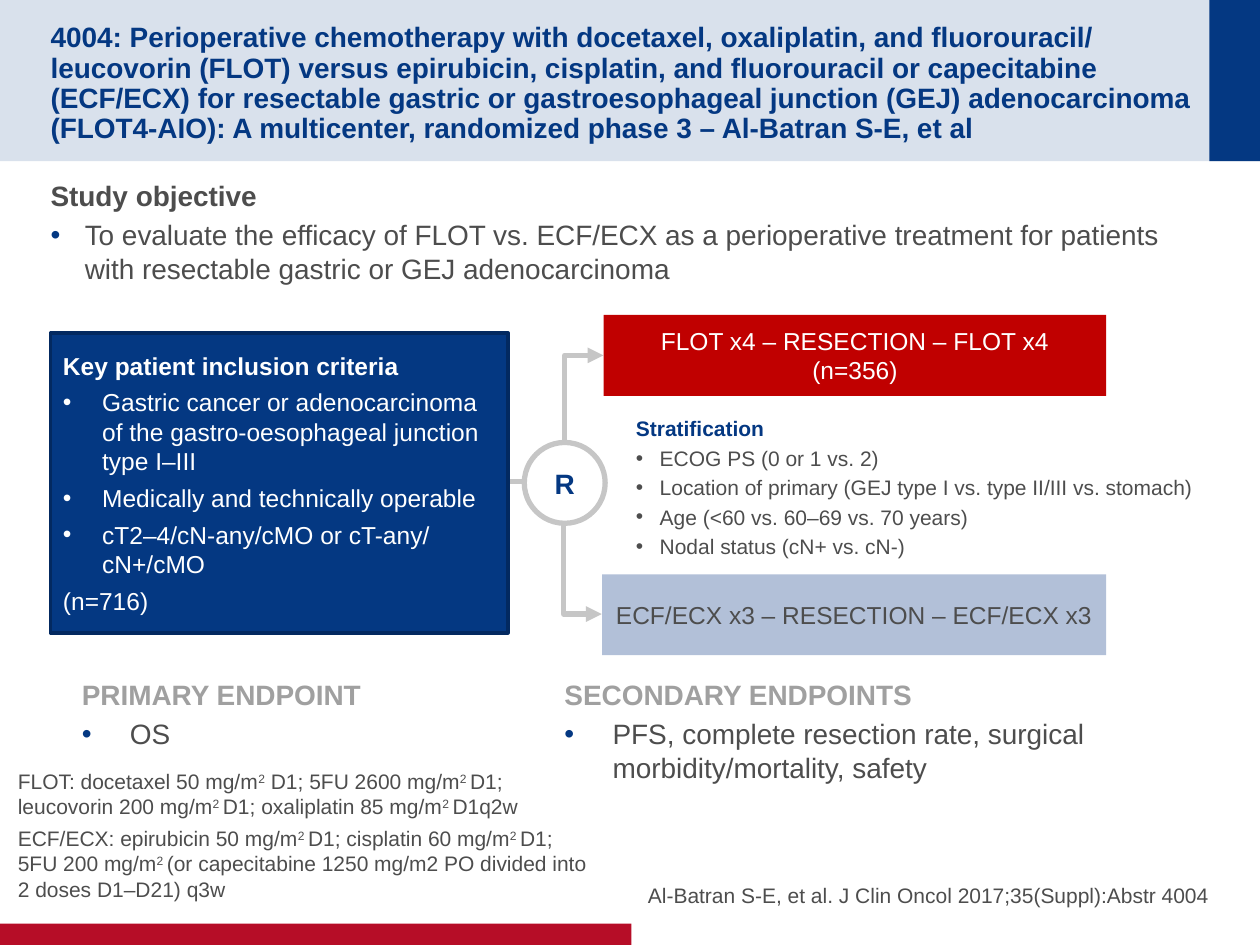
from lxml.etree import SubElement
from pptx import Presentation
from pptx.dml.color import RGBColor
from pptx.enum.shapes import MSO_CONNECTOR, MSO_SHAPE
from pptx.enum.text import MSO_ANCHOR, MSO_AUTO_SIZE, PP_ALIGN
from pptx.oxml.ns import qn
from pptx.util import Cm, Pt

NAVY = RGBColor(0x04, 0x38, 0x82)
DEEP = RGBColor(0x03, 0x29, 0x60)
CRIMSON = RGBColor(0xB6, 0x0D, 0x27)
RED = RGBColor(0xC0, 0x00, 0x00)
PALE = RGBColor(0xB2, 0xC0, 0xD8)
DARK = RGBColor(0x4D, 0x4D, 0x4D)
GREY = RGBColor(0xA0, 0xA0, 0xA0)
SILVER = RGBColor(0xC6, 0xC6, 0xC6)
WHITE = RGBColor(0xFF, 0xFF, 0xFF)

FLUSH = dict(margin_left=0, margin_right=0)
BARE = dict(FLUSH, margin_top=0, margin_bottom=0)
MID = dict(vertical_anchor=MSO_ANCHOR.MIDDLE)
CENTRE = dict(alignment=PP_ALIGN.CENTER)
AFTER = dict(space_after=Pt(4))

deck = Presentation()
deck.slide_width, deck.slide_height = Cm(25.4), Cm(19.05)
slide = deck.slides.add_slide(deck.slide_layouts[5])
shapes = slide.shapes


def write(shape, size, lines, frame={}, para={}):
    """Fill a shape with (text, colour, bold, indent, bullet colour) lines; ^ toggles superscript."""
    body = shape.text_frame
    for key, val in {"word_wrap": True, "auto_size": MSO_AUTO_SIZE.NONE, **frame}.items():
        setattr(body, key, val)
    for num, (text, tone, bold, indent, dot) in enumerate(lines):
        p = body.add_paragraph() if num else body.paragraphs[0]
        for key, val in {"alignment": PP_ALIGN.LEFT, **para}.items():
            setattr(p, key, val)
        if dot is not None:
            props = p._p.get_or_add_pPr()
            props.set("marL", str(Cm(indent)))
            props.set("indent", str(-Cm(indent)))
            SubElement(SubElement(props, qn("a:buClr")), qn("a:srgbClr"), val=str(dot))
            SubElement(props, qn("a:buFont"), typeface="Arial")
            SubElement(props, qn("a:buChar"), char="•")
        for odd, part in enumerate(text.split("^")):
            for row, piece in enumerate(part.split("\n")):
                if row:
                    p.add_line_break()
                run = p.add_run()
                run.text = piece
                for key, val in dict(name="Arial", size=Pt(size), bold=bold).items():
                    setattr(run.font, key, val)
                run.font.color.rgb = tone
                if odd % 2:
                    run.font._element.set("baseline", "30000")


def block(kind, place, fill, edge=None, width=0):
    """Add a filled shape, outlined when an edge colour is given."""
    shape = shapes.add_shape(kind, *map(Cm, place))
    shape.shadow.inherit = False
    shape.fill.solid()
    shape.fill.fore_color.rgb = fill
    if edge is None:
        shape.line.fill.background()
    else:
        shape.line.color.rgb = edge
        shape.line.width = Pt(width)
    return shape


# Header and footer bars, behind the title
bars = [
    ((0, 0, 25.4, 3.25), NAVY),
    ((24.38, 0, 1.02, 3.25), NAVY),
    ((0, 18.62, 12.73, 0.43), CRIMSON),
]
for num, (place, fill) in enumerate(bars):
    bar = block(MSO_SHAPE.RECTANGLE, place, fill)
    shapes._spTree.insert(2 + num, bar._element)
    if num == 0:
        tint = bar._element.spPr.find(qn("a:solidFill"))[0]
        SubElement(tint, qn("a:alpha"), val="15000")

title = shapes.title
spot = dict(left=1.02, top=0.51, width=23.09, height=2.24)
for key, val in spot.items():
    setattr(title, key, Cm(val))
write(title, 16, [(
    "4004: Perioperative chemotherapy with docetaxel, oxaliplatin, and fluorouracil/ "
    "leucovorin (FLOT) versus epirubicin, cisplatin, and fluorouracil or capecitabine "
    "(ECF/ECX) for resectable gastric or gastroesophageal junction (GEJ) adenocarcinoma "
    "(FLOT4-AIO): A multicenter, randomized phase 3 – Al-Batran S-E, et al",
    NAVY, True, 0, None)],
    {**BARE, **MID, "margin_top": Cm(0.13)}, dict(line_spacing=0.9, space_before=Pt(0)))

# Headed lists: place, size, heading, colour, indent, bullet colour, items, frame
lists = [
    ((1.02, 3.48, 23.37, 4), 16, "Study objective", DARK, 0.69, NAVY,
     ["To evaluate the efficacy of FLOT vs. ECF/ECX as a perioperative treatment for "
      "patients with resectable gastric or GEJ adenocarcinoma"], FLUSH),
    ((1.4, 13.54, 9.6, 2.41), 16, "PRIMARY ENDPOINT", GREY, 0.97, NAVY, ["OS"], {}),
    ((11.13, 13.54, 13.92, 2.41), 16, "SECONDARY ENDPOINTS", GREY, 0.97, NAVY,
     ["PFS, complete resection rate, surgical morbidity/mortality, safety"], {}),
    ((12.57, 8.26, 12.01, 2.41), 12, "Stratification", NAVY, 0.48, DARK,
     ["ECOG PS (0 or 1 vs. 2)",
      "Location of primary (GEJ type I vs. type II/III vs. stomach)",
      "Age (<60 vs. 60–69 vs. 70 years)",
      "Nodal status (cN+ vs. cN-)"], {}),
]
for place, size, head, tone, indent, dot, items, frame in lists:
    lines = [(head, tone, True, 0, None)]
    lines += [(item, DARK, False, indent, dot) for item in items]
    write(shapes.add_textbox(*map(Cm, place)), size, lines, frame,
          dict(space_before=Pt(0.2 * size)))

# Doses and citation
doses = [
    "FLOT: docetaxel 50 mg/m^2^ D1; 5FU 2600 mg/m^2 ^D1;\n"
    "leucovorin 200 mg/m^2 ^D1; oxaliplatin 85 mg/m^2 ^D1q2w",
    "ECF/ECX: epirubicin 50 mg/m^2 ^D1; cisplatin 60 mg/m^2 ^D1;\n"
    "5FU 200 mg/m^2 ^(or capecitabine 1250 mg/m2 PO divided into\n2 doses D1–D21) q3w",
]
write(shapes.add_textbox(Cm(0.36), Cm(15.49), Cm(12.65), Cm(2.79)), 12,
      [(dose, DARK, False, 0, None) for dose in doses], BARE, AFTER)
write(shapes.add_textbox(Cm(12.9), Cm(16.94), Cm(11.48), Cm(1.35)), 12,
      [("Al-Batran S-E, et al. J Clin Oncol 2017;35(Suppl):Abstr 4004", DARK, False, 0, None)],
      dict(BARE, vertical_anchor=MSO_ANCHOR.BOTTOM), dict(AFTER, alignment=PP_ALIGN.RIGHT))

# Links: start and end before turning, then the turn in degrees
links = [
    ((12.65, 8.43, 10.9, 7.65), 90),
    ((12.67, 11.07, 10.82, 11.84), 270),
    ((10.24, 9.7, 10.57, 9.7), 0),
]
for ends, turn in links:
    kind = MSO_CONNECTOR.ELBOW if turn else MSO_CONNECTOR.STRAIGHT
    link = shapes.add_connector(kind, *map(Cm, ends))
    link.line.color.rgb = SILVER
    link.line.width = Pt(3)
    props = link._element.spPr
    if turn:
        props.find(qn("a:xfrm")).set("rot", str(turn * 60000))
        props.find(qn("a:prstGeom")).set("prst", "bentConnector2")
        SubElement(props.find(qn("a:ln")), qn("a:tailEnd"), type="triangle")
    SubElement(props, qn("a:effectLst"))

ring = block(MSO_SHAPE.OVAL, (10.57, 8.92, 1.63, 1.63), WHITE, SILVER, 3)
write(ring, 16, [("R", NAVY, True, 0, None)], dict(MID, word_wrap=False), CENTRE)

# Patients and the two arms
cohort = block(MSO_SHAPE.RECTANGLE, (1.02, 6.71, 9.22, 6.05), NAVY, DEEP, 2)
rules = [
    "Gastric cancer or adenocarcinoma of the gastro-oesophageal junction type I–III",
    "Medically and technically operable",
    "cT2–4/cN-any/cMO or cT-any/ cN+/cMO",
]
write(cohort, 14,
      [("Key patient inclusion criteria", WHITE, True, 0, None)]
      + [(rule, WHITE, False, 0.79, WHITE) for rule in rules]
      + [("(n=716)", WHITE, False, 0, None)],
      MID, dict(space_after=Pt(4.2)))

arms = [
    ((12.17, 6.35, 10.13, 1.63), RED, WHITE, ["FLOT x4 – RESECTION – FLOT x4", "(n=356)"]),
    ((12.14, 11.58, 10.16, 1.63), PALE, DARK, ["ECF/ECX x3 – RESECTION – ECF/ECX x3"]),
]
for place, fill, tone, texts in arms:
    write(block(MSO_SHAPE.RECTANGLE, place, fill), 14,
          [(text, tone, False, 0, None) for text in texts], MID, CENTRE)

deck.save("out.pptx")
